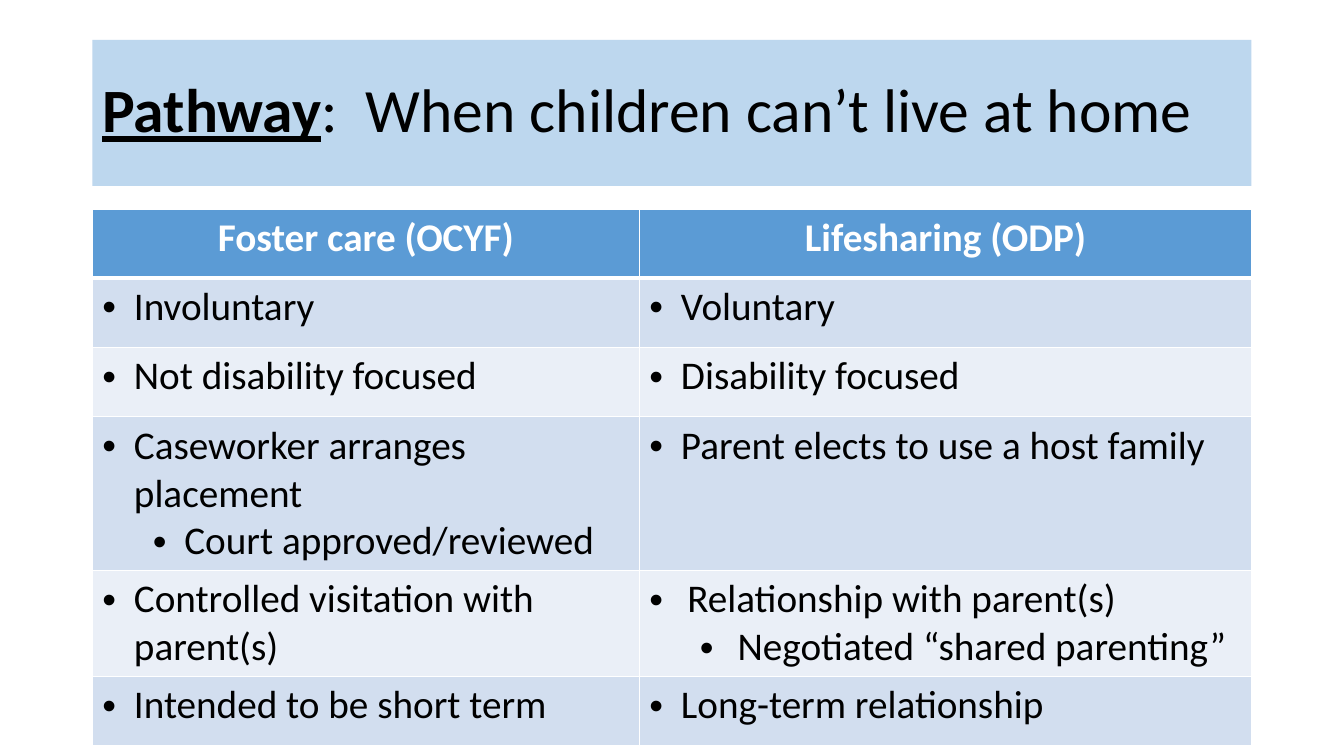
from dataclasses import dataclass

from lxml import etree
from pptx import Presentation
from pptx.dml.color import RGBColor
from pptx.enum.shapes import MSO_SHAPE
from pptx.enum.text import MSO_ANCHOR, PP_ALIGN
from pptx.oxml.ns import qn
from pptx.util import Pt

EMU_PER_PX = 9525
RECTANGLE = MSO_SHAPE.RECTANGLE
MIDDLE = MSO_ANCHOR.MIDDLE
LEFT, CENTER = PP_ALIGN.LEFT, PP_ALIGN.CENTER


@dataclass(frozen=True)
class Theme:
    """Colours, font and type sizes of the slide."""
    font: str = "Calibri"
    title_size: int = 44
    table_size: int = 28
    ink: str = "000000"
    white: str = "FFFFFF"
    banner: str = "BDD7EE"
    header: str = "5B9BD5"
    bands: tuple = ("D2DEEF", "EAEFF7")
    rule: int = 1
    header_rule: int = 3


THEME = Theme()
LEFT_EDGE = 88
COLUMN_WIDTHS = (521, 583)
ROW_HEIGHTS = (66, 66, 66, 113, 100, 66)
HANG = 30
WIDE_HANG = 36
SUB_INDENT = 48

HEADINGS = ("Foster care (OCYF)", "Lifesharing (ODP)")
COMPARISONS = (
    (("Involuntary",), ("Voluntary",)),
    (("Not disability focused",), ("Disability focused",)),
    (("Caseworker arranges placement", "Court approved/reviewed"),
     ("Parent elects to use a host family",)),
    (("Controlled visitation with parent(s)",),
     ("Relationship with parent(s)", "Negotiated “shared parenting”")),
    (("Intended to be short term",), ("Long-term relationship",)),
)


def px(length):
    """Turn whole pixels into EMU."""
    return length * EMU_PER_PX


def apply(target, values):
    """Set each format value on the target."""
    for attribute, value in values.items():
        setattr(target, attribute, value)


def paint(fill, color):
    """Give a fill one solid colour."""
    fill.solid()
    fill.fore_color.rgb = RGBColor.from_string(color)


def add_run(paragraph, text, size, color, bold=False, underline=False):
    """Append formatted text to a paragraph."""
    run = paragraph.add_run()
    run.text = text
    apply(run.font, {"name": THEME.font, "size": Pt(size),
                     "bold": bold, "underline": underline})
    run.font.color.rgb = RGBColor.from_string(color)


def add_banner(slide, topic, statement):
    """Draw the title band with its underlined topic."""
    banner = slide.shapes.add_shape(
        RECTANGLE, px(LEFT_EDGE), px(38), px(sum(COLUMN_WIDTHS)), px(139))
    banner.shadow.inherit = False
    banner.line.fill.background()
    paint(banner.fill, THEME.banner)
    apply(banner.text_frame, {"word_wrap": True, "vertical_anchor": MIDDLE})
    title = banner.text_frame.paragraphs[0]
    apply(title, {"alignment": LEFT, "line_spacing": 0.9})
    add_run(title, topic, THEME.title_size, THEME.ink, True, True)
    add_run(title, statement, THEME.title_size, THEME.ink)


def style_cell(cell, color, top, bottom):
    """Set the borders and then the fill of a cell."""
    properties = cell._tc.get_or_add_tcPr()
    widths = {"L": THEME.rule, "R": THEME.rule, "T": top, "B": bottom}
    for side, width in widths.items():
        border = etree.SubElement(
            properties, qn(f"a:ln{side}"), w=str(Pt(width)))
        solid = etree.SubElement(border, qn("a:solidFill"))
        etree.SubElement(solid, qn("a:srgbClr"), val=THEME.white)
    paint(cell.fill, color)


def add_bullet(paragraph, text, level, hang):
    """Write one bulleted point with a hanging indent."""
    paragraph.level = level
    paragraph.alignment = LEFT
    properties = paragraph._p.get_or_add_pPr()
    properties.set("marL", str(px(hang + level * SUB_INDENT)))
    properties.set("indent", str(px(-hang)))
    etree.SubElement(properties, qn("a:buFont"), typeface="Arial")
    etree.SubElement(properties, qn("a:buChar"), char="•")
    add_run(paragraph, text, THEME.table_size, THEME.ink)


def fill_points(cell, points, hang):
    """Write a main point and its sub-points into a cell."""
    frame = cell.text_frame
    for level, point in enumerate(points):
        paragraph = frame.add_paragraph() if level else frame.paragraphs[0]
        add_bullet(paragraph, point, level, hang)


def add_comparison(slide):
    """Build the two-column table of care pathways."""
    table = slide.shapes.add_table(
        len(ROW_HEIGHTS), len(COLUMN_WIDTHS), px(LEFT_EDGE), px(199),
        px(sum(COLUMN_WIDTHS)), px(sum(ROW_HEIGHTS))).table
    for column, width in zip(table.columns, COLUMN_WIDTHS):
        column.width = px(width)
    for row, height in zip(table.rows, ROW_HEIGHTS):
        row.height = px(height)
    for column, heading in enumerate(HEADINGS):
        cell = table.cell(0, column)
        style_cell(cell, THEME.header, THEME.rule, THEME.header_rule)
        paragraph = cell.text_frame.paragraphs[0]
        paragraph.alignment = CENTER
        add_run(paragraph, heading, THEME.table_size, THEME.white, True)
    for row, comparison in enumerate(COMPARISONS, start=1):
        top = THEME.header_rule if row == 1 else THEME.rule
        for column, points in enumerate(comparison):
            cell = table.cell(row, column)
            style_cell(cell, THEME.bands[(row - 1) % 2], top, THEME.rule)
            wide = column == 1 and len(points) > 1
            fill_points(cell, points, WIDE_HANG if wide else HANG)


def main():
    """Build and save the slide."""
    presentation = Presentation()
    apply(presentation, {"slide_width": px(1280), "slide_height": px(720)})
    slide = presentation.slides.add_slide(presentation.slide_layouts[6])
    add_banner(slide, "Pathway", ":  When children can’t live at home")
    add_comparison(slide)
    presentation.save("out.pptx")


if __name__ == "__main__":
    main()
